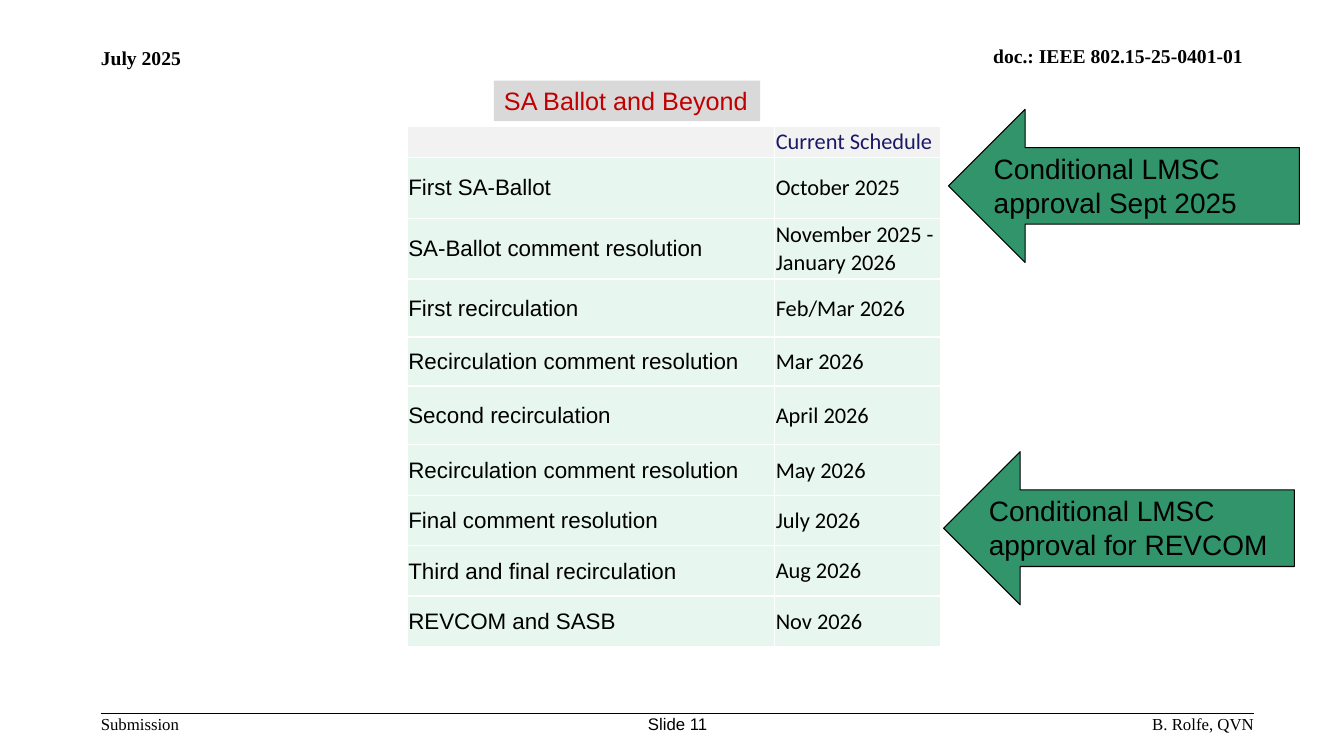
from pptx import Presentation
from pptx.dml.color import RGBColor
from pptx.enum.shapes import MSO_CONNECTOR, MSO_SHAPE
from pptx.enum.text import MSO_ANCHOR, MSO_AUTO_SIZE, PP_ALIGN
from pptx.oxml.ns import qn
from pptx.util import Pt
from lxml import etree

LEFT, CENTER, RIGHT = PP_ALIGN.LEFT, PP_ALIGN.CENTER, PP_ALIGN.RIGHT
TOP, MIDDLE, BOTTOM = MSO_ANCHOR.TOP, MSO_ANCHOR.MIDDLE, MSO_ANCHOR.BOTTOM
STRAIGHT, LEFT_ARROW = MSO_CONNECTOR.STRAIGHT, MSO_SHAPE.LEFT_ARROW
NO_AUTOSIZE = MSO_AUTO_SIZE.NONE
BLACK = RGBColor(0x00, 0x00, 0x00)
RED = RGBColor(0xC0, 0x00, 0x00)
NAVY = RGBColor(0x19, 0x19, 0x66)
TITLE_GRAY = RGBColor(0xD9, 0xD9, 0xD9)
HEADER_GRAY = RGBColor(0xF2, 0xF2, 0xF2)
MINT = RGBColor(0xE7, 0xF6, 0xEF)
GREEN = RGBColor(0x32, 0x94, 0x6A)
SERIF, SANS, DATE_FONT = "Times New Roman", "Arial", "Calibri"

TITLE = "SA Ballot and Beyond"
SCHEDULE = [
    ("", "Current Schedule", 22),
    ("First SA-Ballot", "October 2025", 43.5),
    ("SA-Ballot comment resolution", "November 2025 - January 2026", 43.5),
    ("First recirculation", "Feb/Mar 2026", 41.5),
    ("Recirculation comment resolution", "Mar 2026", 35),
    ("Second recirculation", "April 2026", 42),
    ("Recirculation comment resolution", "May 2026", 36),
    ("Final comment resolution", "July 2026", 36),
    ("Third and final recirculation", "Aug 2026", 36),
    ("REVCOM and SASB", "Nov 2026", 36),
]
COLUMN_WIDTHS = (262.5, 118.5)
ARROWS = [
    ("Conditional LMSC approval for REVCOM", 674, 322.6),
    ("Conditional LMSC approval Sept 2025", 677.5, 78.1),
]
MARGIN_LEFT, MARGIN_RIGHT, FOOTER_TOP = 72, 895.7, 509.8
FURNITURE = [
    ("doc.: IEEE 802.15-25-0401-01", 448, 31, 440, 17.3, RIGHT, BOTTOM, SERIF, 14, True),
    ("July 2025", MARGIN_LEFT, 32.6, 160, 17.3, LEFT, TOP, SERIF, 14, True),
    ("Submission", MARGIN_LEFT, FOOTER_TOP, 75, 14.4, LEFT, TOP, SERIF, 12, False),
    ("Slide 11", 460, FOOTER_TOP, 48, 14.4, CENTER, TOP, SANS, 12, False),
    ("B. Rolfe, QVN", MARGIN_RIGHT - 232, FOOTER_TOP, 232, 14.4, RIGHT, TOP, SERIF, 12, False),
]


def write(frame, text, font, size, color, align=LEFT, bold=False):
    para = frame.paragraphs[0]
    para.alignment = align
    span = para.add_run()
    span.text = text
    span.font.name = font
    span.font.size = Pt(size)
    span.font.bold = bold
    span.font.color.rgb = color


def set_margins(target, left, top, right, bottom):
    target.margin_left, target.margin_top = Pt(left), Pt(top)
    target.margin_right, target.margin_bottom = Pt(right), Pt(bottom)


def add_furniture(page):
    for text, left, top, width, height, align, anchor, font, size, bold in FURNITURE:
        box = page.shapes.add_textbox(Pt(left), Pt(top), Pt(width), Pt(height))
        frame = box.text_frame
        frame.word_wrap = True
        frame.vertical_anchor = anchor
        set_margins(frame, 0, 0, 0, 0)
        write(frame, text, font, size, BLACK, align, bold)
    rule = page.shapes.add_connector(
        STRAIGHT, Pt(MARGIN_LEFT), Pt(FOOTER_TOP), Pt(MARGIN_RIGHT), Pt(FOOTER_TOP))
    rule.line.color.rgb = BLACK
    rule.line.width = Pt(1)
    etree.SubElement(rule._element.spPr, qn("a:effectLst"))


def add_title(page):
    title = page.shapes.title
    title.left, title.top, title.width, title.height = Pt(352.8), Pt(57.6), Pt(190.2), Pt(29)
    title.fill.solid()
    title.fill.fore_color.rgb = TITLE_GRAY
    frame = title.text_frame
    frame.auto_size = NO_AUTOSIZE
    frame.word_wrap = False
    frame.vertical_anchor = TOP
    set_margins(frame, 7.2, 3.6, 7.2, 3.6)
    write(frame, TITLE, SANS, 18, RED)


def add_schedule(page):
    total_height = sum(row[2] for row in SCHEDULE)
    table = page.shapes.add_table(
        len(SCHEDULE), len(COLUMN_WIDTHS), Pt(291), Pt(90),
        Pt(sum(COLUMN_WIDTHS)), Pt(total_height)).table
    table.first_row = table.horz_banding = False
    for column, width in zip(table.columns, COLUMN_WIDTHS):
        column.width = Pt(width)
    for index, (stage, date, height) in enumerate(SCHEDULE):
        table.rows[index].height = Pt(height)
        fill, color = (MINT, BLACK) if index else (HEADER_GRAY, NAVY)
        for position, (text, font) in enumerate(((stage, SANS), (date, DATE_FONT))):
            cell = table.cell(index, position)
            cell.fill.solid()
            cell.fill.fore_color.rgb = fill
            cell.vertical_anchor = MIDDLE
            set_margins(cell, 0.7, 0.7, 0.7, 0)
            write(cell.text_frame, text, font, 16, color)


def add_arrows(page):
    for text, left, top in ARROWS:
        arrow = page.shapes.add_shape(LEFT_ARROW, Pt(left), Pt(top), Pt(250.6), Pt(109.4))
        arrow.shadow.inherit = False
        arrow.fill.solid()
        arrow.fill.fore_color.rgb = GREEN
        arrow.line.color.rgb = BLACK
        arrow.line.width = Pt(0.75)
        frame = arrow.text_frame
        frame.word_wrap = True
        frame.vertical_anchor = TOP
        set_margins(frame, 5, 2.9, 5, 2.9)
        write(frame, text, SANS, 20, BLACK)


def main():
    deck = Presentation()
    deck.slide_width, deck.slide_height = Pt(960), Pt(540)
    page = deck.slides.add_slide(deck.slide_layouts[5])
    add_furniture(page)
    add_title(page)
    add_schedule(page)
    add_arrows(page)
    deck.save("out.pptx")


if __name__ == "__main__":
    main()
